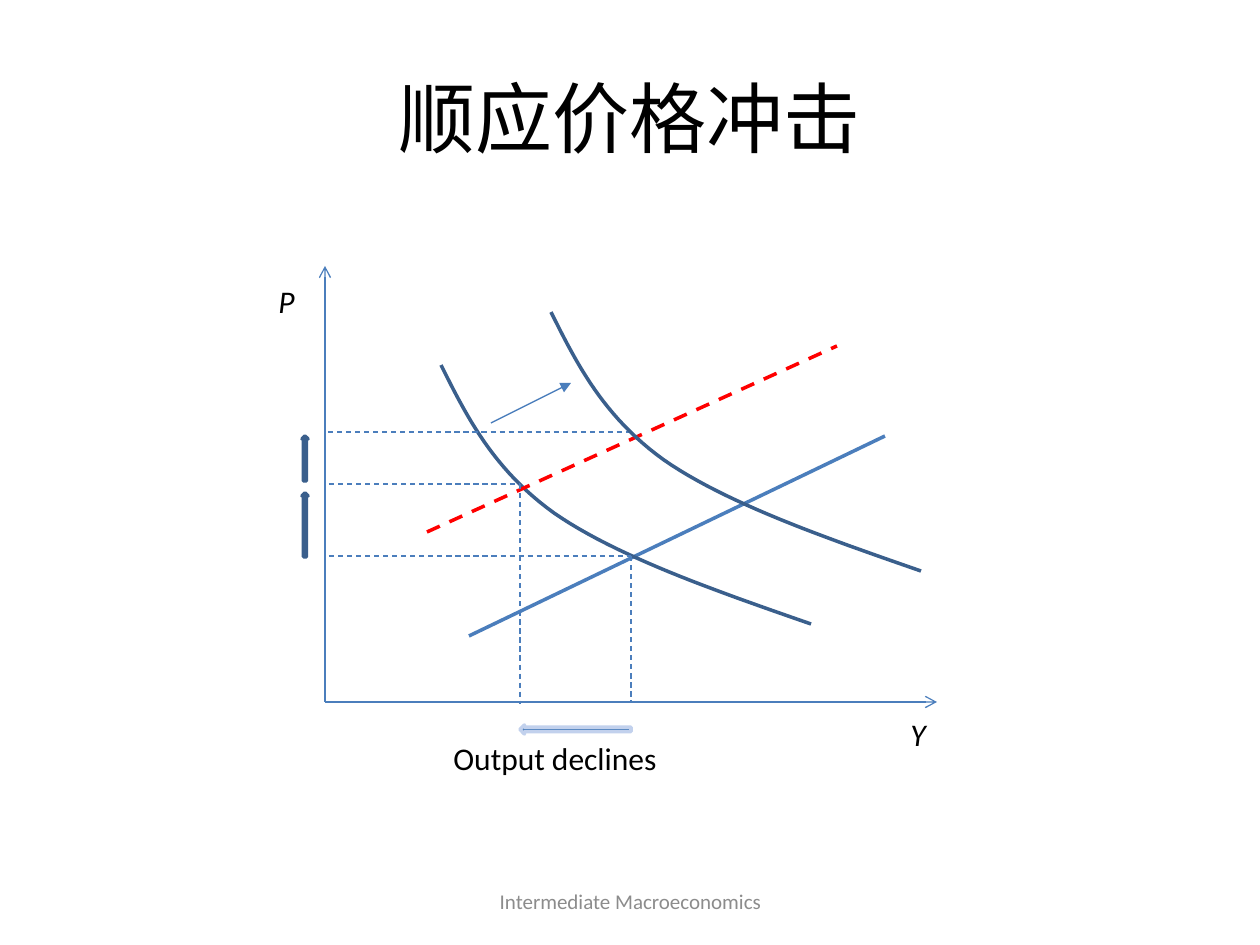
from pptx import Presentation
from pptx import util as u
from pptx.dml.color import RGBColor
from pptx.enum import dml, shapes, text
from pptx.oxml import ns, xmlchemy

PX = 914400 / 126
COLORS = {
    "text": "000000",
    "footer": "8C8C8C",
    "line": "4B7EBC",
    "curve": "3A5F8C",
    "shock": "FF0000",
    "arrow": "4F81BD",
    "pale": "C2D1ED",
}
DEMAND = [(441, 365), (467, 417), (493, 469), (554, 513), (616, 556), (713, 590), (811, 624)]
DEMAND_SHIFT = (110, -53)
ORIGIN = (325, 702)
CURVE_STEPS = 24


def px(length):
    return u.Emu(round(length * PX))


def rgb(name):
    return RGBColor.from_string(COLORS[name])


def set_line(line, color, width):
    line.color.rgb = rgb(color)
    line.width = u.Pt(width)


def add_label(slide, box, wording, size=18, color="text", italic=False, centered=False):
    frame = slide.shapes.add_textbox(*map(px, box)).text_frame
    frame.word_wrap = True
    frame.text = wording
    paragraph = frame.paragraphs[0]
    if centered:
        frame.vertical_anchor = text.MSO_ANCHOR.MIDDLE
        paragraph.alignment = text.PP_ALIGN.CENTER
    font = paragraph.runs[0].font
    font.name = "Calibri"
    font.size = u.Pt(size)
    font.italic = italic
    font.color.rgb = rgb(color)


def add_line(slide, start, end, color="line", width=0.75, dashed=False, head=None):
    line = slide.shapes.add_connector(shapes.MSO_CONNECTOR.STRAIGHT, *map(px, start + end))
    set_line(line.line, color, width)
    if dashed:
        line.line.dash_style = dml.MSO_LINE.DASH
    properties = line.element.spPr
    if head:
        tail = xmlchemy.OxmlElement("a:tailEnd")
        tail.set("type", head)
        properties.find(ns.qn("a:ln")).append(tail)
    properties.append(xmlchemy.OxmlElement("a:effectLst"))


def bezier_point(controls, t):
    weights = ((1 - t) ** 3, 3 * t * (1 - t) ** 2, 3 * t**2 * (1 - t), t**3)
    return tuple(px(sum(w * c for w, c in zip(weights, axis))) for axis in zip(*controls))


def add_curve(slide, controls):
    points = [
        bezier_point(controls[first:first + 4], step / CURVE_STEPS)
        for first in range(0, len(controls) - 1, 3)
        for step in range(CURVE_STEPS + 1)
    ]
    builder = slide.shapes.build_freeform(*points[0])
    builder.add_line_segments(points[1:], close=False)
    curve = builder.convert_to_shape()
    curve.shadow.inherit = False
    curve.fill.background()
    set_line(curve.line, "curve", 2)


def add_block_arrow(slide, kind, box, outline):
    arrow = slide.shapes.add_shape(kind, *map(px, box))
    arrow.shadow.inherit = False
    arrow.fill.solid()
    arrow.fill.fore_color.rgb = rgb("arrow")
    set_line(arrow.line, outline, 2)


def main():
    """Build the slide on accommodating a price shock."""
    deck = Presentation()
    deck.slide_width, deck.slide_height = px(1260), px(945)
    slide = deck.slides.add_slide(deck.slide_layouts[6])

    add_label(slide, (63, 38, 1134, 158), "顺应价格冲击", 44, centered=True)
    add_label(slide, (431, 876, 399, 50), "Intermediate Macroeconomics", 12, "footer", centered=True)

    for axis_end in ((937, 702), (325, 266)):
        add_line(slide, ORIGIN, axis_end, head="arrow")
    add_label(slide, (266, 276, 59, 50), "P", italic=True)
    add_label(slide, (898, 709, 59, 50), "Y", italic=True)

    add_line(slide, (469, 636), (885, 436), width=2)
    add_curve(slide, DEMAND)
    add_line(slide, (427, 532), (837, 346), "shock", 2, dashed=True)

    guides = [
        ((329, 556), (631, 556)),
        ((329, 484), (520, 484)),
        ((520, 484), (520, 704)),
        ((631, 556), (631, 702)),
        ((328, 432), (630, 432)),
    ]
    for start, end in guides:
        add_line(slide, start, end, dashed=True)

    add_block_arrow(slide, shapes.MSO_SHAPE.LEFT_ARROW, (520, 725, 111, 9), "pale")
    add_label(slide, (441, 733, 260, 50), "Output declines")

    dx, dy = DEMAND_SHIFT
    add_curve(slide, [(x + dx, y + dy) for x, y in DEMAND])
    add_line(slide, (491, 423), (571, 383), head="triangle")

    for top, height in ((493, 64), (436, 45)):
        add_block_arrow(slide, shapes.MSO_SHAPE.UP_ARROW, (302, top, 6, height), "curve")

    deck.save("out.pptx")


if __name__ == "__main__":
    main()
